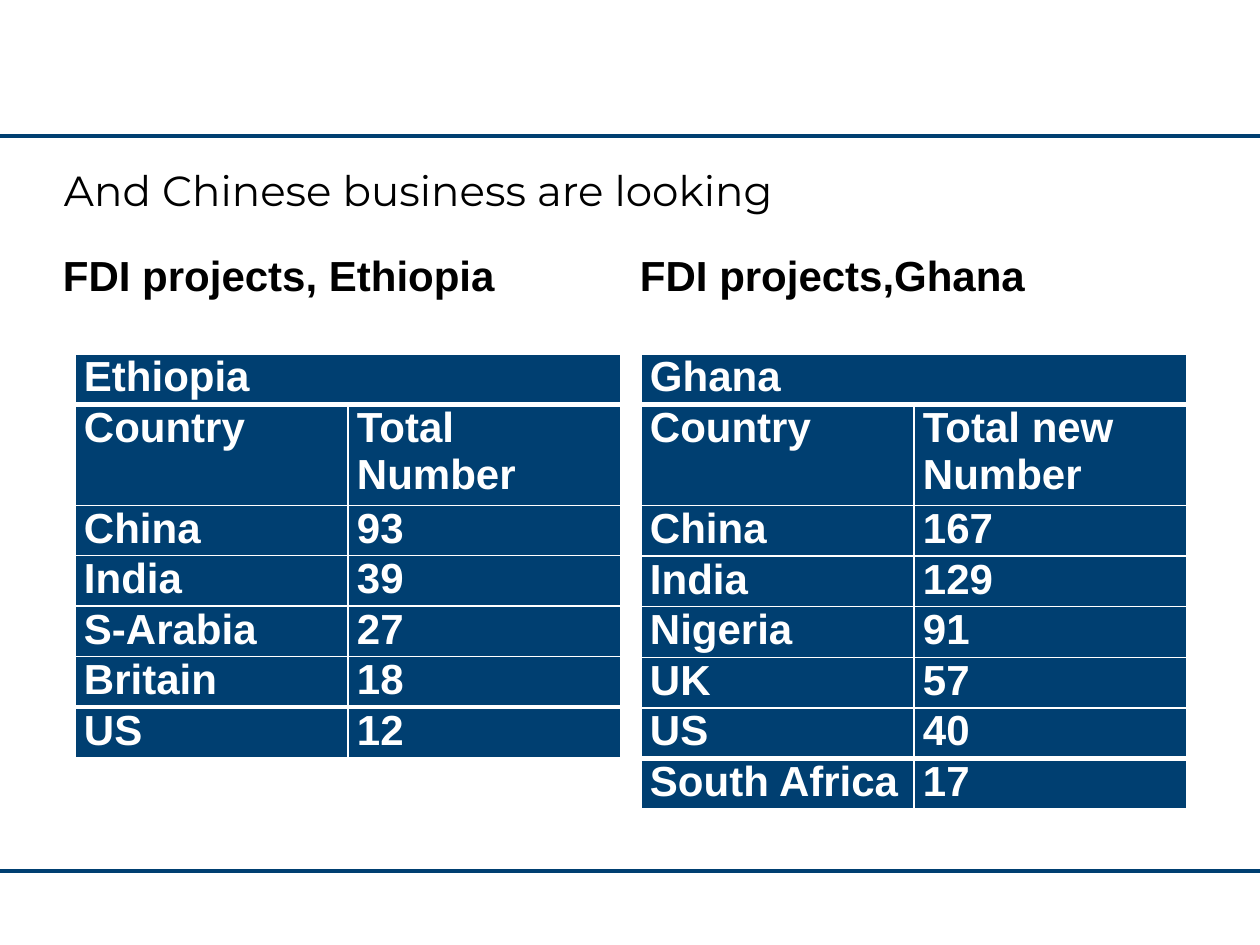
from lxml.etree import SubElement
from pptx import Presentation
from pptx.dml.color import RGBColor
from pptx.enum.shapes import MSO_CONNECTOR
from pptx.enum.text import MSO_ANCHOR, PP_ALIGN
from pptx.oxml import parse_xml
from pptx.oxml.ns import nsdecls, qn
from pptx.util import Emu, Pt

NAVY, WHITE, BLACK = "003F71", "FFFFFF", "000000"


def px(value):
    return Emu(round(value * 914400 / 126))


def add_span(para, text, font, color, bold):
    span = para.add_run()
    span.text = text
    span.font.name = font
    span.font.size = Pt(24)
    span.font.bold = bold
    span.font.color.rgb = RGBColor.from_string(color)


deck = Presentation()
deck.slide_width, deck.slide_height = px(1260), px(945)
page = deck.slides.add_slide(deck.slide_layouts[6])

# Rules above and below the content
for y in (136, 871):
    rule = page.shapes.add_connector(MSO_CONNECTOR.STRAIGHT, 0, px(y), px(1260), px(y))
    rule.line.color.rgb = RGBColor.from_string(NAVY)
    rule.line.width = Pt(2)
    SubElement(rule._element.spPr, qn("a:effectLst"))

# Title and column headings
headings = [
    ("And Chinese business are looking", 64, 165, 1134, 60, "Montserrat", False, MSO_ANCHOR.TOP),
    ("FDI projects, Ethiopia", 63, 212, 557, 88, "Arial", True, MSO_ANCHOR.BOTTOM),
    ("FDI projects,Ghana", 640, 212, 557, 88, "Arial", True, MSO_ANCHOR.BOTTOM),
]
for text, left, top, width, height, font, bold, anchor in headings:
    box = page.shapes.add_textbox(px(left), px(top), px(width), px(height))
    frame = box.text_frame
    frame.word_wrap = True
    frame.vertical_anchor = anchor
    frame.margin_left = frame.margin_right = frame.margin_top = frame.margin_bottom = 0
    add_span(frame.paragraphs[0], text, font, BLACK, bold)

# Tables: the second row is twice as tall as the others
tables = [
    (75, 396, [
        ("Ethiopia", ""), ("Country", "Total Number"), ("China", "93"), ("India", "39"),
        ("S-Arabia", "27"), ("Britain", "18"), ("US", "12"),
    ]),
    (641, 455, [
        ("Ghana", ""), ("Country", "Total new\nNumber"), ("China", "167"), ("India", "129"),
        ("Nigeria", "91"), ("UK", "57"), ("US", "40"), ("South Africa", "17"),
    ]),
]
for left, height, rows in tables:
    frame = page.shapes.add_table(len(rows), 2, px(left), px(354), px(546), px(height))
    table = frame.table
    last = len(rows) - 1
    for column in table.columns:
        column.width = px(273)
    for r, row in enumerate(rows):
        table.rows[r].height = px(height / (len(rows) + 1) * (2 if r == 1 else 1))
        # Thick lines under the first row and over the last one
        top_width = 3 if r in (1, last) else 1
        bottom_width = 3 if r in (0, last - 1) else 1
        sides = [("lnL", 1), ("lnR", 1), ("lnT", top_width), ("lnB", bottom_width)]
        for c, text in enumerate(row):
            cell = table.cell(r, c)
            cell.margin_left = cell.margin_right = px(9)
            cell.margin_top = cell.margin_bottom = 0
            cell.fill.solid()
            cell.fill.fore_color.rgb = RGBColor.from_string(NAVY)
            for position, (side, width) in enumerate(sides):
                border = parse_xml(
                    f'<a:{side} {nsdecls("a")} w="{Pt(width)}"><a:solidFill>'
                    f'<a:srgbClr val="{WHITE}"/></a:solidFill></a:{side}>'
                )
                cell._tc.get_or_add_tcPr().insert(position, border)
            for n, line in enumerate(text.split("\n") if text else []):
                words = cell.text_frame
                para = words.add_paragraph() if n else words.paragraphs[0]
                para.alignment = PP_ALIGN.JUSTIFY
                add_span(para, line, "Arial", WHITE, True)
    table.cell(0, 0).merge(table.cell(0, 1))

deck.save("out.pptx")
